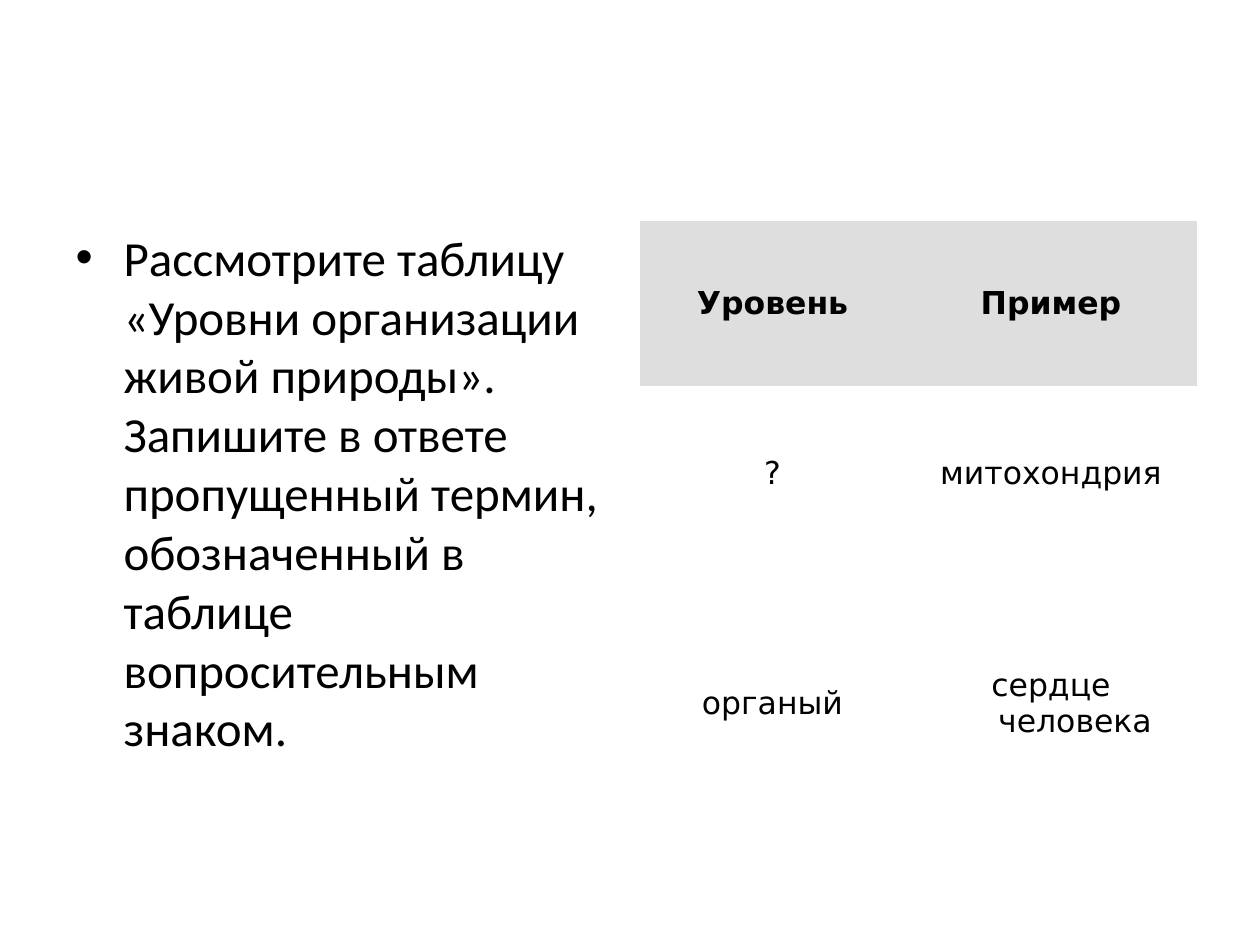
from lxml import etree
from pptx import Presentation
from pptx import util as u
from pptx.dml.color import RGBColor
from pptx.enum import text
from pptx.oxml.ns import qn

PX = 914400 / 126
HANGING = 48
TASK = ("Рассмотрите таблицу «Уровни организации живой природы». "
        "Запишите в ответе пропущенный термин, обозначенный в таблице "
        "вопросительным знаком.")
LEVELS = [("Уровень", "Пример"),
          ("?", "митохондрия"),
          ("органый", "сердце человека")]


def px(length):
    return u.Emu(round(length * PX))


def color(hex_code):
    return RGBColor.from_string(hex_code)


def add_run(paragraph, words, size, font_name, bold=False):
    run = paragraph.add_run()
    run.text = words
    run.font.size = u.Pt(size)
    run.font.name = font_name
    run.font.bold = bold
    run.font.color.rgb = color("000000")


def set_hanging_indent(paragraph):
    properties = paragraph._p.get_or_add_pPr()
    properties.set("marL", str(px(HANGING)))
    properties.set("indent", str(-px(HANGING)))


def hide_borders(cell):
    properties = cell._tc.get_or_add_tcPr()
    for position, side in enumerate(("lnL", "lnR", "lnT", "lnB")):
        border = etree.Element(qn(f"a:{side}"), w="0")
        etree.SubElement(border, qn("a:noFill"))
        properties.insert(position, border)


def place_task(body, left, top, width, height):
    body.left, body.top = px(left), px(top)
    body.width, body.height = px(width), px(height)
    paragraph = body.text_frame.paragraphs[0]
    set_hanging_indent(paragraph)
    paragraph.space_before = u.Pt(0)
    add_run(paragraph, TASK, 28, "Calibri")


def fill_cell(cell, words, is_header):
    cell.fill.solid()
    cell.fill.fore_color.rgb = color("DEDEDE" if is_header else "FFFFFF")
    hide_borders(cell)
    cell.vertical_anchor = text.MSO_ANCHOR.MIDDLE
    paragraph = cell.text_frame.paragraphs[0]
    paragraph.alignment = text.PP_ALIGN.CENTER
    set_hanging_indent(paragraph)
    add_run(paragraph, words, 18, "DejaVu Sans", is_header)


def add_levels_table(slide, left, top, column_widths, row_heights):
    table = slide.shapes.add_table(
        len(row_heights), len(column_widths), px(left), px(top),
        px(sum(column_widths)), px(sum(row_heights))).table
    for column, width in zip(table.columns, column_widths):
        column.width = px(width)
    for row, height, entries in zip(table.rows, row_heights, LEVELS):
        row.height = px(height)
        for cell, words in zip(row.cells, entries):
            fill_cell(cell, words, is_header=entries is LEVELS[0])


def main():
    deck = Presentation()
    deck.slide_width, deck.slide_height = px(1260), px(945)
    slide = deck.slides.add_slide(deck.slide_layouts[3])
    title, task, spare = slide.placeholders
    for unused in (title, spare):
        unused.element.getparent().remove(unused.element)
    place_task(task, 63, 221, 557, 624)
    add_levels_table(slide, 640, 221, (265, 292), (165, 175, 285))
    deck.save("out.pptx")


if __name__ == "__main__":
    main()
